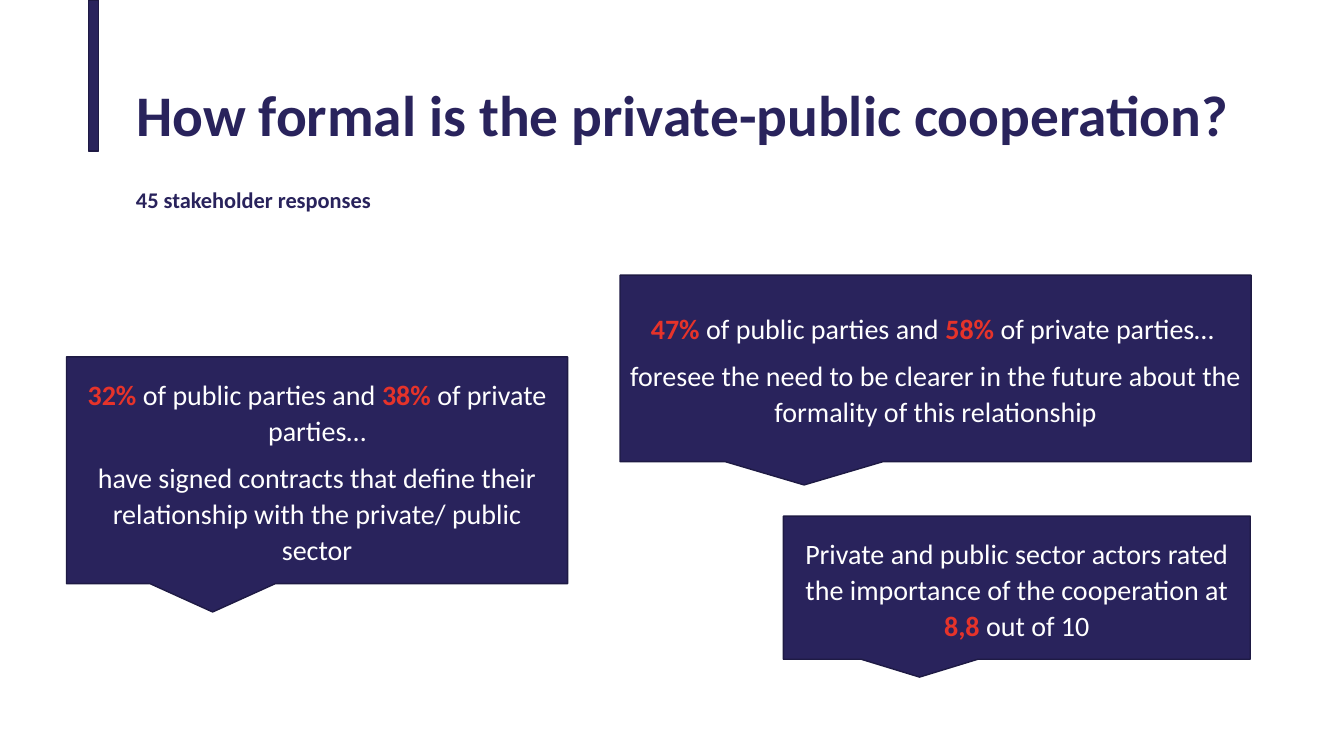
from pptx import Presentation
from pptx.dml.color import RGBColor
from pptx.enum.shapes import MSO_SHAPE
from pptx.enum.text import MSO_ANCHOR, MSO_AUTO_SIZE, PP_ALIGN
from pptx.util import Inches, Pt

RECT, CALLOUT = MSO_SHAPE.RECTANGLE, MSO_SHAPE.RECTANGULAR_CALLOUT
MIDDLE, NO_FIT = MSO_ANCHOR.MIDDLE, MSO_AUTO_SIZE.NONE
CENTER, JUSTIFY, LEFT = PP_ALIGN.CENTER, PP_ALIGN.JUSTIFY, PP_ALIGN.LEFT
COLORS = {"navy": "29235C", "edge": "1E1A44", "red": "E6332A", "white": "FFFFFF"}
FRAME = {"word_wrap": True, "auto_size": NO_FIT, "vertical_anchor": MIDDLE}
BODY = {"alignment": CENTER, "line_spacing": 1.07, "space_after": Pt(8)}
NOTES = [
    ((0.66, 3.54, 4.97, 2.25), [
        [("32% ", True), ("of public parties and ", False),
         ("38% ", True), ("of private parties…", False)],
        [("have signed contracts that define their relationship "
          "with the private/ public sector", False)]]),
    ((6.15, 2.73, 6.26, 1.85), [
        [("47% ", True), ("of public parties and ", False),
         ("58% ", True), ("of private parties… ", False)],
        [("foresee the need to be clearer in the future about "
          "the formality of this relationship", False)]]),
    ((7.77, 5.12, 4.63, 1.42), [
        [("Private and public sector actors rated the importance "
          "of the cooperation at ", False),
         ("8,8", True), (" out of 10", False)]]),
]


def apply(item, values):
    """Set each named value on the item."""
    for name, value in values.items():
        setattr(item, name, value)


def add_run(para, text, size, color, bold):
    """Add one formatted run to a paragraph."""
    run = para.add_run()
    run.text = text
    apply(run.font, {"name": "Calibri", "size": Pt(size), "bold": bold})
    run.font.color.rgb = RGBColor.from_string(COLORS[color])


def add_block(slide, kind, box):
    """Draw a navy shape with a thin dark edge."""
    shape = slide.shapes.add_shape(kind, *map(Inches, box))
    shape.shadow.inherit = False
    shape.fill.solid()
    shape.fill.fore_color.rgb = RGBColor.from_string(COLORS["navy"])
    shape.line.color.rgb = RGBColor.from_string(COLORS["edge"])
    shape.line.width = Pt(1)
    return shape


def add_note(slide, box, paras):
    """Draw a callout whose key figures stand out in red."""
    frame = add_block(slide, CALLOUT, box).text_frame
    apply(frame, FRAME)
    for i, parts in enumerate(paras):
        para = frame.add_paragraph() if i else frame.paragraphs[0]
        apply(para, BODY)
        for text, key in parts:
            add_run(para, text, 20, "red" if key else "white", key)


def add_head(slide, box):
    """Place the accent bar, title and subtitle in the box."""
    left, top, width, height = box
    add_block(slide, RECT, (left - 0.37, 0, 0.1, 1.5))
    title = slide.shapes.title
    spot = dict(zip(("left", "top", "width", "height"), map(Inches, box)))
    apply(title, spot)
    sub = slide.shapes.add_textbox(
        *map(Inches, (left, top + height - 0.1, 3.01, 0.45)))
    lines = [(title, "How formal is the private-public cooperation?", 41, JUSTIFY),
             (sub, "45 stakeholder responses", 16, LEFT)]
    for shape, text, size, align in lines:
        apply(shape.text_frame, FRAME)
        para = shape.text_frame.paragraphs[0]
        para.alignment = align
        add_run(para, text, size, "navy", True)


def main():
    """Build the slide and save it."""
    deck = Presentation()
    apply(deck, {"slide_width": Inches(13.33), "slide_height": Inches(7.5)})
    slide = deck.slides.add_slide(deck.slide_layouts[5])
    add_head(slide, (1.25, 0.4, 11.16, 1.45))
    for box, paras in NOTES:
        add_note(slide, box, paras)
    deck.save("out.pptx")


if __name__ == "__main__":
    main()
